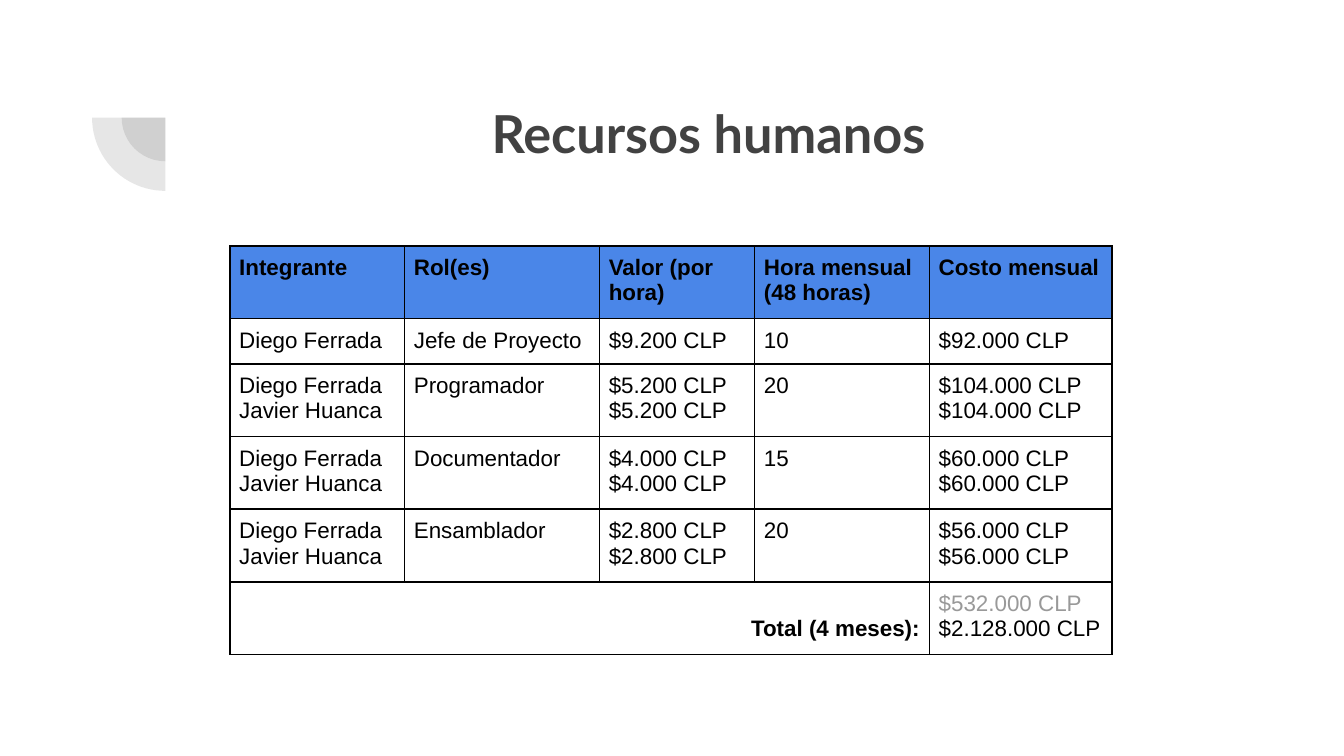
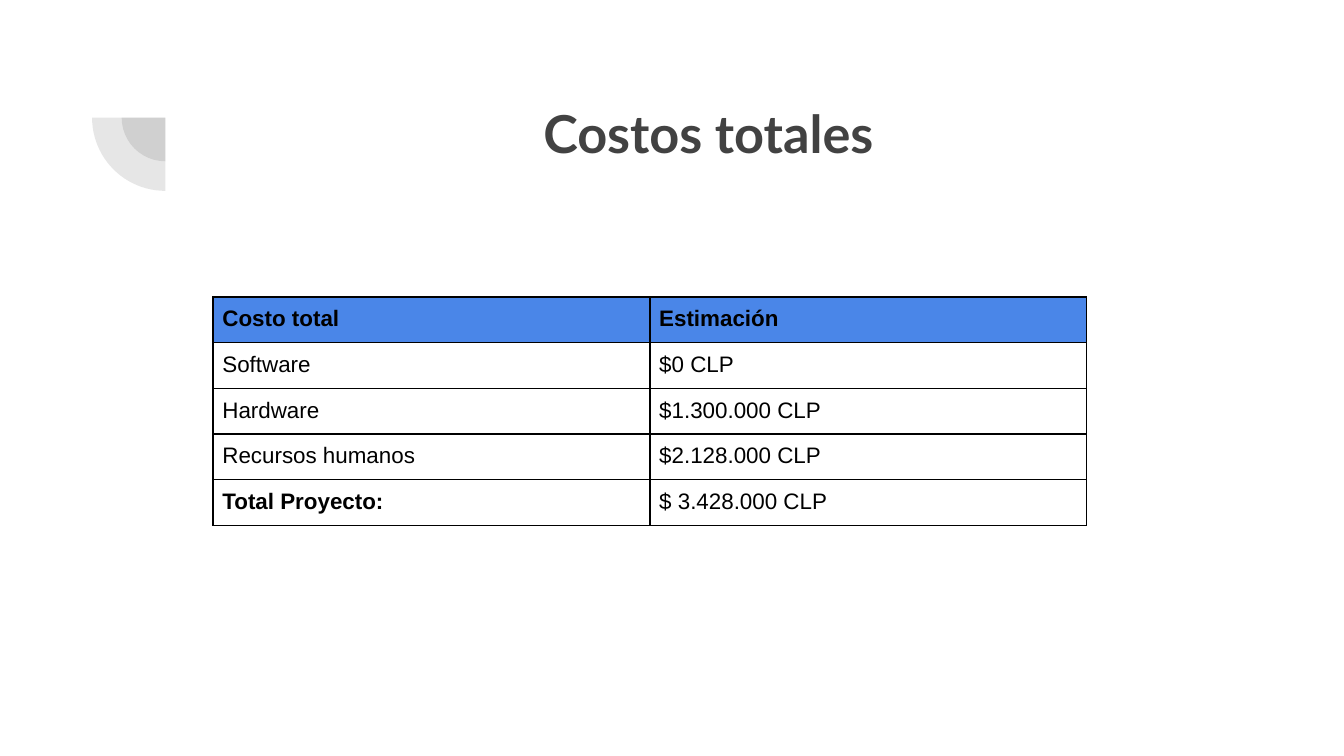
import copy

import pptx
import pptx.util
import pptx.dml.color
import pptx.enum.shapes
import pptx.enum.text
import pptx.oxml
import pptx.oxml.ns

PX = 4572
SLIDE_WIDTH, SLIDE_HEIGHT = 2000, 1125
TITLE_BOX = (285, 130, 1538, 218)
ORNAMENT_BOX = (137, 66, 218, 218)
ORNAMENT_INSETS = (44, 0)
TABLE_SIZE = (656, 656)
MINIMUM_ROW = 2

WHITE = pptx.dml.color.RGBColor(0xFF, 0xFF, 0xFF)
BLACK = pptx.dml.color.RGBColor(0x00, 0x00, 0x00)
CHARCOAL = pptx.dml.color.RGBColor(0x42, 0x42, 0x42)
GRAY = pptx.dml.color.RGBColor(0x99, 0x99, 0x99)
HEADER_BLUE = pptx.dml.color.RGBColor(0x4A, 0x86, 0xE8)

TITLE_FONT = {"name": "Lato", "size": pptx.util.Pt(28), "bold": True}
CELL_FONT = {"name": "Arial", "size": pptx.util.Pt(12), "bold": False}
SIDES = ("left", "right", "top", "bottom")
ALIGN = pptx.enum.text.PP_ALIGN
ANCHOR = pptx.enum.text.MSO_ANCHOR

RESOURCES = [
    ["Integrante", "Rol(es)", "Valor (por hora)", "Hora mensual (48 horas)", "Costo mensual"],
    ["Diego Ferrada", "Jefe de Proyecto", "$9.200 CLP", "10", "$92.000 CLP"],
    ["Diego Ferrada\nJavier Huanca", "Programador", "$5.200 CLP\n$5.200 CLP", "20",
     "$104.000 CLP\n$104.000 CLP"],
    ["Diego Ferrada\nJavier Huanca", "Documentador", "$4.000 CLP\n$4.000 CLP", "15",
     "$60.000 CLP\n$60.000 CLP"],
    ["Diego Ferrada\nJavier Huanca", "Ensamblador", "$2.800 CLP\n$2.800 CLP", "20",
     "$56.000 CLP\n$56.000 CLP"],
    ["\vTotal (4 meses):", "", "", "", "$532.000 CLP\n$2.128.000 CLP"],
]
COSTS = [
    ["Costo total", "Estimación"],
    ["Software", "$0 CLP"],
    ["Hardware", "$1.300.000 CLP"],
    ["Recursos humanos", "$2.128.000 CLP"],
    ["Total Proyecto:", "$ 3.428.000 CLP"],
]


def emu(*lengths):
    return [length * PX for length in lengths]


def apply_format(target, values):
    for name, value in values.items():
        setattr(target, name, value)


def margins(inset):
    return {f"margin_{side}": inset * PX for side in SIDES}


def format_paragraph(paragraph, font, color, alignment):
    paragraph.alignment = alignment
    for run in paragraph.runs:
        apply_format(run.font, font)
        run.font.color.rgb = color
        for line_break in paragraph._p.findall(pptx.oxml.ns.qn("a:br")):
            line_break.append(copy.deepcopy(run._r.rPr))


def add_ornament(slide, box):
    left, top, width, height = box
    for inset in ORNAMENT_INSETS:
        pie = slide.shapes.add_shape(
            pptx.enum.shapes.MSO_SHAPE.PIE,
            *emu(left + inset, top + inset, width - 2 * inset, height - 2 * inset))
        pie.adjustments[0], pie.adjustments[1] = 107.93, 162
        pie.rotation = 270
        pie.shadow.inherit = False
        pie.line.fill.background()
        pie.fill.solid()
        pie.fill.fore_color.rgb = CHARCOAL
        color = pie.fill._xPr.find(".//" + pptx.oxml.ns.qn("a:srgbClr"))
        color.append(pptx.oxml.parse_xml(
            f'<a:alpha {pptx.oxml.ns.nsdecls("a")} val="13000"/>'))


def add_title(slide, box, text):
    frame = slide.shapes.add_textbox(*emu(*box)).text_frame
    apply_format(frame, {"word_wrap": True, "vertical_anchor": ANCHOR.TOP, **margins(20)})
    frame.text = text
    format_paragraph(frame.paragraphs[0], TITLE_FONT, CHARCOAL, ALIGN.CENTER)


def add_borders(cell):
    properties = cell._tc.get_or_add_tcPr()
    for side in "LRTB":
        properties.append(pptx.oxml.parse_xml(
            f'<a:ln{side} {pptx.oxml.ns.nsdecls("a")} w="12700">'
            f'<a:solidFill><a:srgbClr val="{BLACK}"/></a:solidFill></a:ln{side}>'))


def fill_cell(cell, text, header):
    cell.text = text
    apply_format(cell, {"vertical_anchor": ANCHOR.TOP, **margins(14)})
    add_borders(cell)
    if header:
        cell.fill.solid()
        cell.fill.fore_color.rgb = HEADER_BLUE
    else:
        cell.fill.background()
    bold = header or text.strip().startswith("Total")
    for paragraph in cell.text_frame.paragraphs:
        format_paragraph(paragraph, {**CELL_FONT, "bold": bold}, BLACK, ALIGN.LEFT)


def add_cost_table(slide, box, column_widths, row_heights, rows):
    frame = slide.shapes.add_table(len(rows), len(column_widths), *emu(*box))
    table = frame.table
    apply_format(table, {"first_row": False, "horz_banding": False})
    for column, width in zip(table.columns, column_widths):
        column.width = width * PX
    for row, height in zip(table.rows, row_heights):
        row.height = height * PX
    frame.width, frame.height = emu(*box[2:])
    for row_index, texts in enumerate(rows):
        for column_index, text in enumerate(texts):
            fill_cell(table.cell(row_index, column_index), text, row_index == 0)
    return table


def add_base_slide(presentation, title):
    slide = presentation.slides.add_slide(presentation.slide_layouts[6])
    slide.background.fill.solid()
    slide.background.fill.fore_color.rgb = WHITE
    add_ornament(slide, ORNAMENT_BOX)
    add_title(slide, TITLE_BOX, title)
    return slide


def add_resources_slide(presentation):
    slide = add_base_slide(presentation, "Recursos humanos")
    table = add_cost_table(slide, (342, 366, *TABLE_SIZE), [260, 290, 231, 260, 272],
                           [MINIMUM_ROW] * 5 + [94], RESOURCES)
    total_label, total_cost = table.cell(5, 0), table.cell(5, 4)
    total_label.merge(table.cell(5, 3))
    total_label.text_frame.paragraphs[0].alignment = ALIGN.RIGHT
    total_cost.text_frame.paragraphs[0].runs[0].font.color.rgb = GRAY


def add_costs_slide(presentation):
    slide = add_base_slide(presentation, "Costos totales")
    add_cost_table(slide, (317, 442, *TABLE_SIZE), [650] * 2,
                   [MINIMUM_ROW] * len(COSTS), COSTS)


def main():
    presentation = pptx.Presentation()
    apply_format(presentation, {"slide_width": SLIDE_WIDTH * PX,
                                "slide_height": SLIDE_HEIGHT * PX})
    add_resources_slide(presentation)
    add_costs_slide(presentation)
    presentation.save("out.pptx")


if __name__ == "__main__":
    main()
